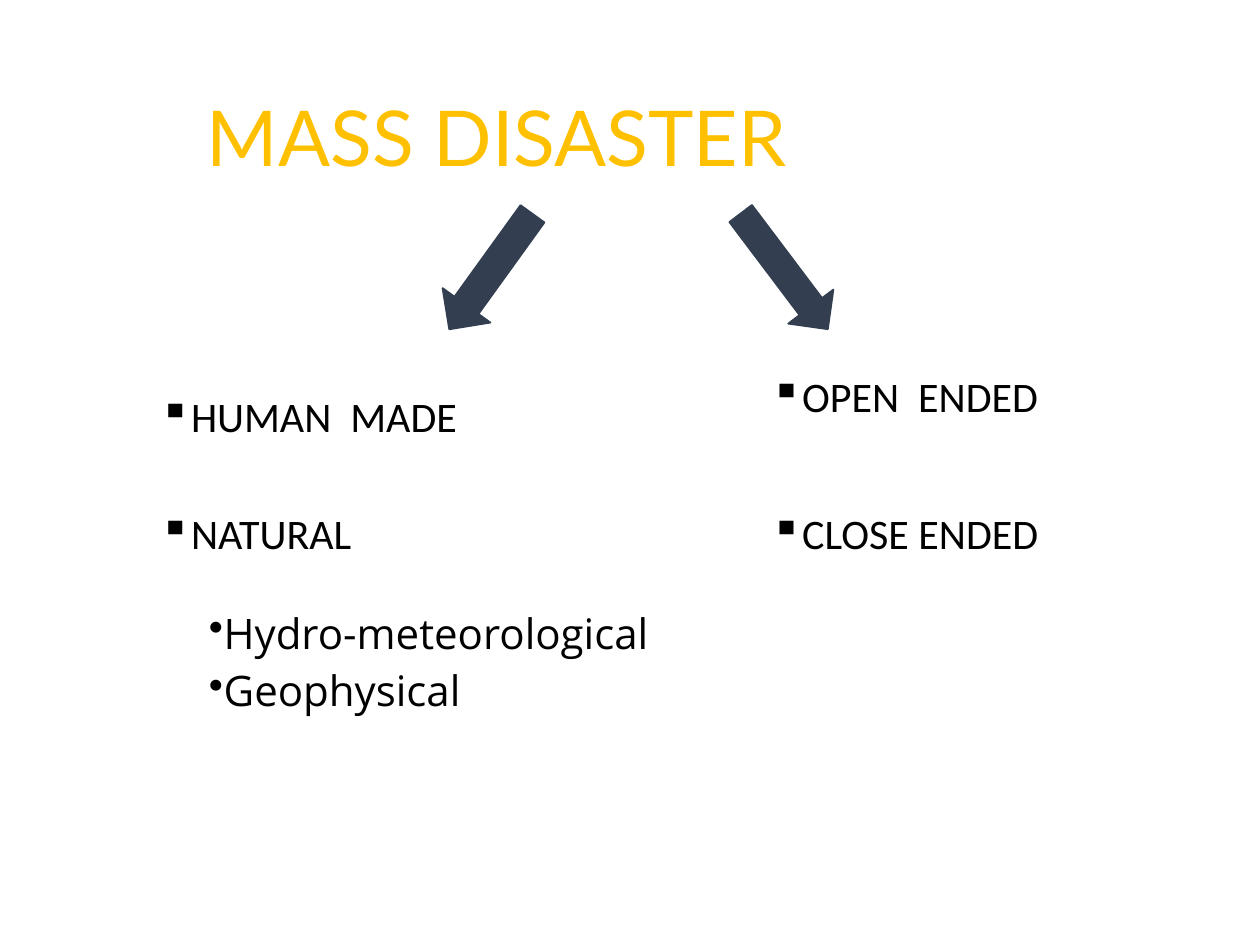
import dataclasses

import pptx
import pptx.dml.color
import pptx.enum.shapes
import pptx.enum.text
import pptx.util
from lxml import etree

Cm = pptx.util.Cm
Pt = pptx.util.Pt


@dataclasses.dataclass(frozen=True)
class Theme:
    title_color: str = "FFC000"
    text_color: str = "000000"
    arrow_color: str = "333F50"
    title_font: str = "Lato"
    label_font: str = "Calibri"
    detail_font: str = "Open Sans"
    title_size: int = 44
    text_size: int = 24


THEME = Theme()

# Content: positions and sizes in centimetres
TITLE = "MASS DISASTER"
TITLE_PLACE = (1.75, 1.02, 21.89, 3.68)
TITLE_INDENT = 2.17

ARROWS = [  # left, top, width, height, rotation in degrees
    (15.24, 4.01, 1.14, 2.92, 323),
    (9.30, 4.04, 1.19, 2.87, 35.8),
]

CAUSE_LEFT, TYPE_LEFT, DETAIL_LEFT = 2.97, 15.29, 3.96
CAUSE_INDENT, TYPE_INDENT, DETAIL_INDENT = 0.61, 0.42, 0
LABEL_HEIGHT = 1.27
LOWER_ROW = 10.11
LABELS = [  # text, left, top, width, bullet, indent, font
    ("HUMAN  MADE", CAUSE_LEFT, 7.75, 9.93, "▪", CAUSE_INDENT, THEME.label_font),
    ("OPEN  ENDED", TYPE_LEFT, 7.34, 8.33, "▪", TYPE_INDENT, THEME.label_font),
    ("CLOSE ENDED", TYPE_LEFT, LOWER_ROW, 7.75, "▪", TYPE_INDENT, THEME.label_font),
    ("NATURAL", CAUSE_LEFT, LOWER_ROW, 8.13, "▪", CAUSE_INDENT, THEME.label_font),
    ("Hydro-meteorological", DETAIL_LEFT, 12.12, 13.11, "•", DETAIL_INDENT, THEME.detail_font),
    ("Geophysical", DETAIL_LEFT, 13.28, 7.14, "•", DETAIL_INDENT, THEME.detail_font),
]


def rgb(color):
    return pptx.dml.color.RGBColor.from_string(color)


def set_indent(para, margin, first_line):
    properties = para._p.get_or_add_pPr()
    properties.set("marL", str(Cm(margin)))
    properties.set("indent", str(Cm(first_line)))
    return properties


def add_bullet(para, bullet, indent):
    properties = set_indent(para, indent, -indent)
    namespace = pptx.oxml.ns.qn("a:buChar")
    etree.SubElement(properties, namespace).set("char", bullet)


def add_text(page, text, place, font, size, color):
    box = page.shapes.add_textbox(*map(Cm, place))
    box.text_frame.word_wrap = True
    para = box.text_frame.paragraphs[0]
    para.text = text
    return box.text_frame, para, (font, size, color)


def set_font(para, name, size, color):
    para.font.name = name
    para.font.size = Pt(size)
    para.font.color.rgb = rgb(color)


def add_title(page):
    frame, para, font = add_text(page, TITLE, TITLE_PLACE, THEME.title_font,
                                 THEME.title_size, THEME.title_color)
    frame.vertical_anchor = pptx.enum.text.MSO_ANCHOR.MIDDLE
    para.line_spacing = 0.9
    set_indent(para, TITLE_INDENT, 0)
    set_font(para, *font)


def add_label(page, text, left, top, width, bullet, indent, font_name):
    frame, para, font = add_text(page, text, (left, top, width, LABEL_HEIGHT),
                                 font_name, THEME.text_size, THEME.text_color)
    frame.auto_size = pptx.enum.text.MSO_AUTO_SIZE.SHAPE_TO_FIT_TEXT
    add_bullet(para, bullet, indent)
    set_font(para, *font)


def add_arrow(page, left, top, width, height, rotation):
    arrow = page.shapes.add_shape(pptx.enum.shapes.MSO_SHAPE.DOWN_ARROW,
                                  Cm(left), Cm(top), Cm(width), Cm(height))
    arrow.rotation = rotation
    arrow.shadow.inherit = False
    arrow.fill.solid()
    arrow.fill.fore_color.rgb = rgb(THEME.arrow_color)
    arrow.line.color.rgb = rgb(THEME.arrow_color)
    arrow.line.width = Pt(1)


def main():
    deck = pptx.Presentation()
    deck.slide_width, deck.slide_height = Cm(25.4), Cm(19.05)
    page = deck.slides.add_slide(deck.slide_layouts[6])

    # Heading and the two branches below it
    add_title(page)
    for arrow in ARROWS:
        add_arrow(page, *arrow)

    # Kinds of disaster
    for label in LABELS:
        add_label(page, *label)

    deck.save("out.pptx")


if __name__ == "__main__":
    main()
